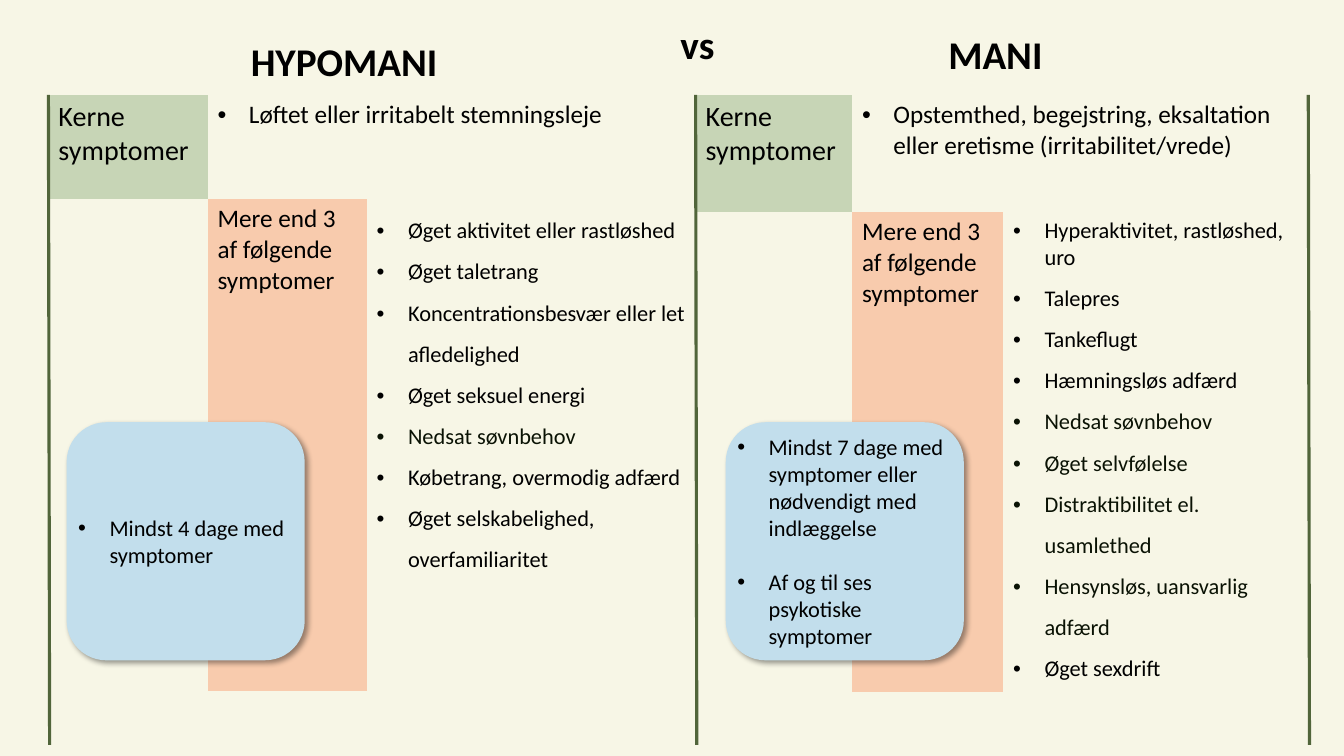
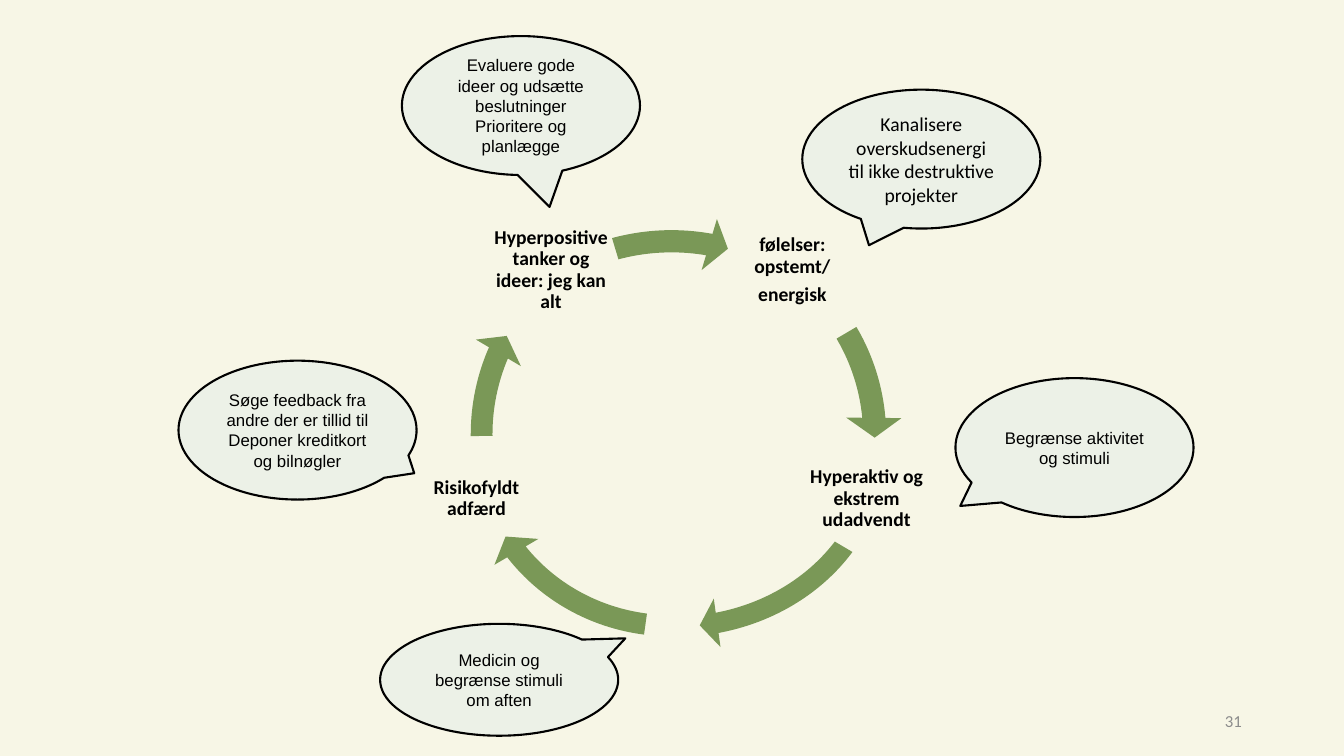
from lxml import etree
from pptx import Presentation
from pptx.dml.color import RGBColor
from pptx.enum import shapes, text
from pptx.oxml import ns
from pptx.util import Cm, Pt

CREAM = RGBColor(0xF7, 0xF6, 0xE6)
SAGE = RGBColor(0xC7, 0xD5, 0xB6)
PEACH = RGBColor(0xF8, 0xCB, 0xAD)
SKY = RGBColor(0xC2, 0xDE, 0xEC)
MIST = RGBColor(0xEC, 0xF1, 0xE7)
LEAF = RGBColor(0x7A, 0x98, 0x57)
FOREST = RGBColor(0x51, 0x65, 0x3A)
GREY = RGBColor(0x8C, 0x8C, 0x8C)
BLACK = RGBColor(0x00, 0x00, 0x00)
SOFT_BLACK = RGBColor(0x0A, 0x12, 0x04)

NO_TABLE_STYLE = "{2D5ABB26-0587-4C30-8999-92F81FD0307C}"
BULLET_INDENT = Cm(0.79)


def write(frame, lines, size, font="Calibri", color=BLACK, bold=False,
          align=text.PP_ALIGN.LEFT, spacing=None, after=None, bullet=False):
    """Fill a text frame with one formatted paragraph per line."""
    frame.word_wrap = True
    frame.text = "\n".join(lines)
    for paragraph in frame.paragraphs:
        if bullet:
            properties = paragraph._p.get_or_add_pPr()
            properties.set("marL", str(BULLET_INDENT))
            properties.set("indent", str(-BULLET_INDENT))
            etree.SubElement(properties, ns.qn("a:buFont")).set("typeface", "Arial")
            etree.SubElement(properties, ns.qn("a:buChar")).set("char", "•")
        paragraph.alignment = align
        if spacing is not None:
            paragraph.line_spacing = spacing
        if after is not None:
            paragraph.space_after = after
        for run in paragraph.runs:
            run.font.name = font
            run.font.size = Pt(size)
            run.font.bold = bold
            run.font.color.rgb = color


def set_insets(frame, inset):
    frame.margin_left = frame.margin_right = inset
    frame.margin_top = frame.margin_bottom = inset


presentation = Presentation()
presentation.slide_width = Cm(33.87)
presentation.slide_height = Cm(19.05)
background = presentation.slide_master.background.fill
background.solid()
background.fore_color.rgb = CREAM
TITLE_ONLY, BLANK = presentation.slide_layouts[5], presentation.slide_layouts[6]

# Slide 1: hypomania versus mania
slide = presentation.slides.add_slide(TITLE_ONLY)
TOP = 2.39

panels = [
    {
        "left": 1.22, "columns": (4.01, 4.01, 8.28), "rows": (2.62, 12.4),
        "core": "Løftet eller irritabelt stemningsleje",
        "symptoms": [
            "Øget aktivitet eller rastløshed",
            "Øget taletrang",
            "Koncentrationsbesvær eller let afledelighed",
            "Øget seksuel energi",
            "Nedsat søvnbehov",
            "Købetrang, overmodig adfærd",
            "Øget selskabelighed, overfamiliaritet",
        ],
        "soft": slice(4, 5), "first_spacing": 1.5,
        "box_left": 1.68,
        "duration": ["Mindst 4 dage med symptomer"],
    },
    {
        "left": 17.53, "columns": (3.94, 3.81, 7.85), "rows": (2.95, 12.09),
        "core": "Opstemthed, begejstring, eksaltation eller eretisme "
                "(irritabilitet/vrede)",
        "symptoms": [
            "Hyperaktivitet, rastløshed, uro",
            "Talepres",
            "Tankeflugt",
            "Hæmningsløs adfærd",
            "Nedsat søvnbehov",
            "Øget selvfølelse",
            "Distraktibilitet el. usamlethed",
            "Hensynsløs, uansvarlig adfærd",
            "Øget sexdrift",
        ],
        "soft": slice(4, 8), "first_spacing": 1.0,
        "box_left": 18.29,
        "duration": [
            "Mindst 7 dage med symptomer eller nødvendigt med indlæggelse",
            "Af og til ses psykotiske symptomer",
        ],
    },
]

for panel in panels:
    table = slide.shapes.add_table(
        2, 3, Cm(panel["left"]), Cm(TOP),
        Cm(sum(panel["columns"])), Cm(sum(panel["rows"]))).table
    table.first_row = table.horz_banding = False
    table._tbl.tblPr.find(ns.qn("a:tableStyleId")).text = NO_TABLE_STYLE
    for column, width in zip(table.columns, panel["columns"]):
        column.width = Cm(width)
    for row, height in zip(table.rows, panel["rows"]):
        row.height = Cm(height)
    for cell in table.iter_cells():
        cell.fill.background()
    table.cell(0, 1).merge(table.cell(0, 2))
    for cell, color in ((table.cell(0, 0), SAGE), (table.cell(1, 1), PEACH)):
        cell.fill.solid()
        cell.fill.fore_color.rgb = color

    write(table.cell(0, 0).text_frame, ["Kerne symptomer"], 20)
    write(table.cell(0, 1).text_frame, [panel["core"]], 18, bullet=True)
    write(table.cell(1, 1).text_frame, ["Mere end 3 af følgende symptomer"], 18)
    symptoms = table.cell(1, 2).text_frame
    write(symptoms, panel["symptoms"], 16, spacing=1.5, bullet=True)
    symptoms.paragraphs[0].line_spacing = panel["first_spacing"]
    for paragraph in symptoms.paragraphs[panel["soft"]]:
        paragraph.runs[0].font.color.rgb = SOFT_BLACK

for panel in panels:
    box = slide.shapes.add_shape(
        shapes.MSO_SHAPE.ROUNDED_RECTANGLE,
        Cm(panel["box_left"]), Cm(10.64), Cm(6), Cm(6))
    box.fill.solid()
    box.fill.fore_color.rgb = SKY
    box.line.fill.background()
    box.shadow.inherit = False
    effects = box._element.spPr.find(ns.qn("a:effectLst"))
    shadow = etree.SubElement(
        effects, ns.qn("a:outerShdw"), blurRad=str(Pt(4)), dist=str(Pt(3)),
        dir=str(45 * 60000), algn="tl", rotWithShape="0")
    shadow_color = etree.SubElement(shadow, ns.qn("a:srgbClr"), val=str(BLACK))
    etree.SubElement(shadow_color, ns.qn("a:alpha"), val="40000")
    set_insets(box.text_frame, 0)
    box.text_frame.vertical_anchor = text.MSO_ANCHOR.MIDDLE
    write(box.text_frame, panel["duration"], 16, bullet=True)
    for paragraph in box.text_frame.paragraphs[1:]:
        paragraph.space_before = Pt(19.5)

title = slide.shapes.title
title.left, title.top, title.width, title.height = Cm(6.32), Cm(0.94), Cm(6.1), Cm(1.45)
mania = slide.shapes.add_textbox(Cm(23.9), Cm(0.76), Cm(7.49), Cm(1.45))
versus = slide.shapes.add_textbox(Cm(17.15), Cm(0.51), Cm(6.1), Cm(1.45))
for heading, wording in ((title, "HYPOMANI"), (mania, "MANI"), (versus, "vs")):
    frame = heading.text_frame
    frame.auto_size = text.MSO_AUTO_SIZE.NONE
    frame.vertical_anchor = text.MSO_ANCHOR.TOP
    set_insets(frame, 0)
    write(frame, [wording], 28, bold=True)

for x in (17.53, 1.22, 32.97):
    divider = slide.shapes.add_connector(
        shapes.MSO_CONNECTOR.STRAIGHT, Cm(x), Cm(TOP), Cm(x + 0.03), Cm(18.77))
    divider.line.color.rgb = FOREST
    divider.line.width = Pt(2.25)
    etree.SubElement(divider._element.spPr, ns.qn("a:effectLst"))

# Slide 2: the manic circle and ways to interrupt it
slide = presentation.slides.add_slide(BLANK)

arrows = [  # left, top, width, height, head angle, tail angle
    (11.13, 5.18, 11.61, 11.61, 212.94, 197.66),
    (11.3, 6.15, 11.43, 10.26, 45.91, 18.29),
    (11.38, 5.72, 11.07, 10.69, 86.35, 58.74),
    (11.48, 5.28, 10.97, 11.33, 122.99, 107.7),
    (11.07, 5.41, 11.71, 11.18, 168.67, 151.98),
]
for left, top, width, height, head, tail in arrows:
    arrow = slide.shapes.add_shape(
        shapes.MSO_SHAPE.CIRCULAR_ARROW, Cm(left), Cm(top), Cm(width), Cm(height))
    for index, value in enumerate((0.05, 3.36, head, tail, 0.06)):
        arrow.adjustments[index] = value
    arrow.fill.solid()
    arrow.fill.fore_color.rgb = LEAF
    arrow.line.fill.background()
    arrow.shadow.inherit = False

stages = [
    (18.42, 5.26, ["følelser: opstemt/", "energisk"]),
    (20.29, 11.02, ["Hyperaktiv og ekstrem udadvendt"]),
    (10.46, 11.02, ["Risikofyldt adfærd"]),
    (12.34, 5.26, ["Hyperpositive tanker og ideer: jeg kan alt"]),
]
for left, top, lines in stages:
    stage = slide.shapes.add_textbox(Cm(left), Cm(top), Cm(3.1), Cm(3.1))
    set_insets(stage.text_frame, Cm(0.05))
    stage.text_frame.vertical_anchor = text.MSO_ANCHOR.MIDDLE
    write(stage.text_frame, lines, 14, bold=True, align=text.PP_ALIGN.CENTER,
          spacing=0.9, after=Pt(5))

callouts = [  # left, top, height, pointer, font, size, lines
    (10.13, 0.91, 3.5, (0.12, 0.73), "Arial", 12,
     ["Evaluere gode ideer og udsætte beslutninger", "Prioritere og planlægge"]),
    (24.08, 9.53, 3.5, (-0.48, 0.42), "Arial", 12,
     ["Begrænse aktivitet og stimuli"]),
    (4.5, 9.09, 3.5, (0.49, 0.31), "Arial", 12,
     ["Søge feedback fra andre der er tillid til",
      "Deponer kreditkort og bilnøgler"]),
    (20.22, 2.26, 3.5, (-0.22, 0.62), "Calibri", 14,
     ["Kanalisere overskudsenergi til ikke destruktive projekter"]),
    (9.58, 15.72, 2.82, (0.53, -0.37), "Arial", 12,
     ["Medicin og begrænse stimuli om aften"]),
]
for left, top, height, pointer, font, size, lines in callouts:
    callout = slide.shapes.add_shape(
        shapes.MSO_SHAPE.OVAL_CALLOUT, Cm(left), Cm(top), Cm(6), Cm(height))
    callout.adjustments[0], callout.adjustments[1] = pointer
    callout.fill.solid()
    callout.fill.fore_color.rgb = MIST
    callout.line.color.rgb = BLACK
    callout.line.width = Pt(1.5)
    callout.shadow.inherit = False
    callout.text_frame.vertical_anchor = text.MSO_ANCHOR.MIDDLE
    write(callout.text_frame, lines, size, font, align=text.PP_ALIGN.CENTER)

page_number = slide.shapes.add_textbox(Cm(23.93), Cm(17.65), Cm(7.62), Cm(1.02))
page_number.text_frame.vertical_anchor = text.MSO_ANCHOR.MIDDLE
write(page_number.text_frame, ["31"], 12, color=GREY, align=text.PP_ALIGN.RIGHT)

presentation.save("out.pptx")
